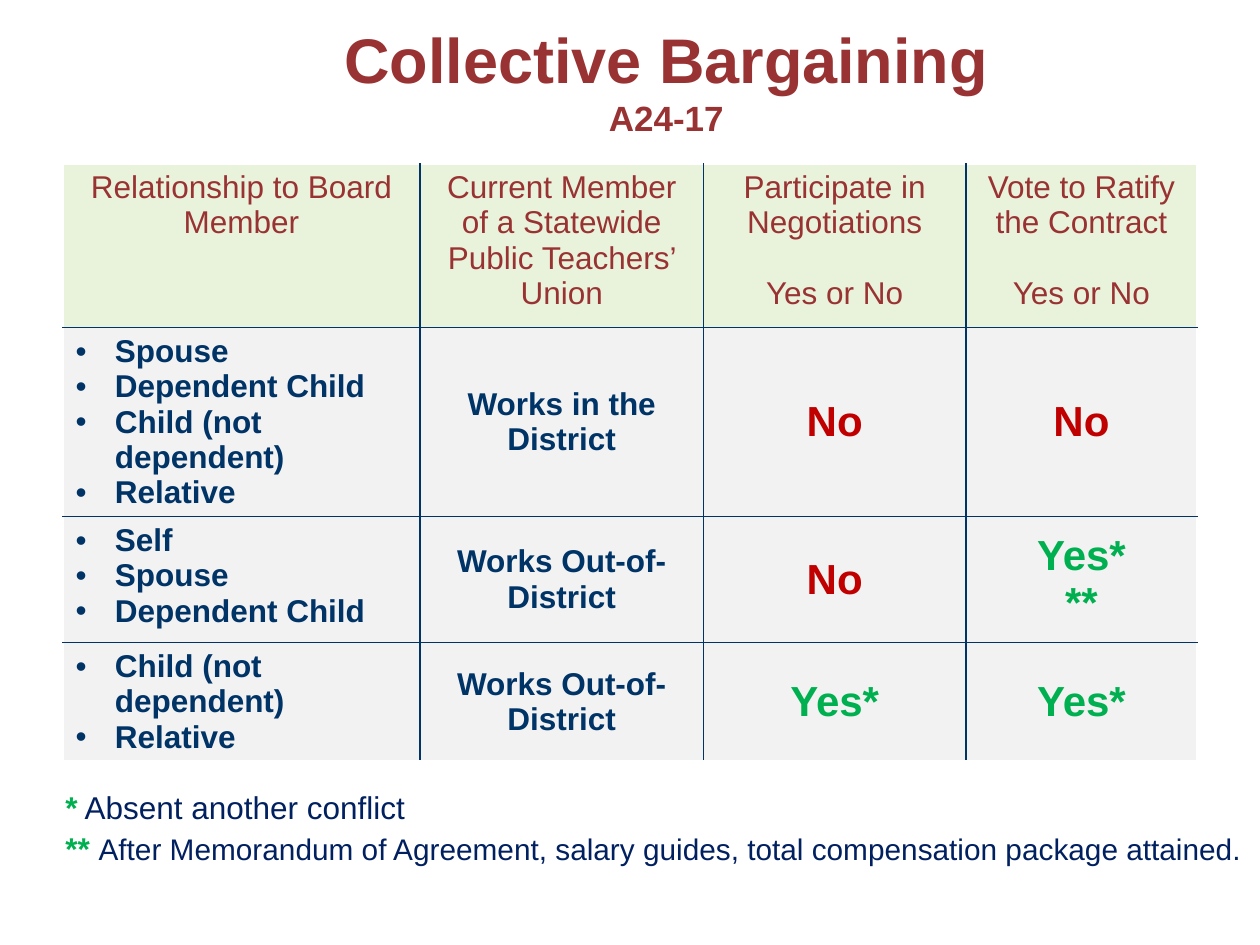
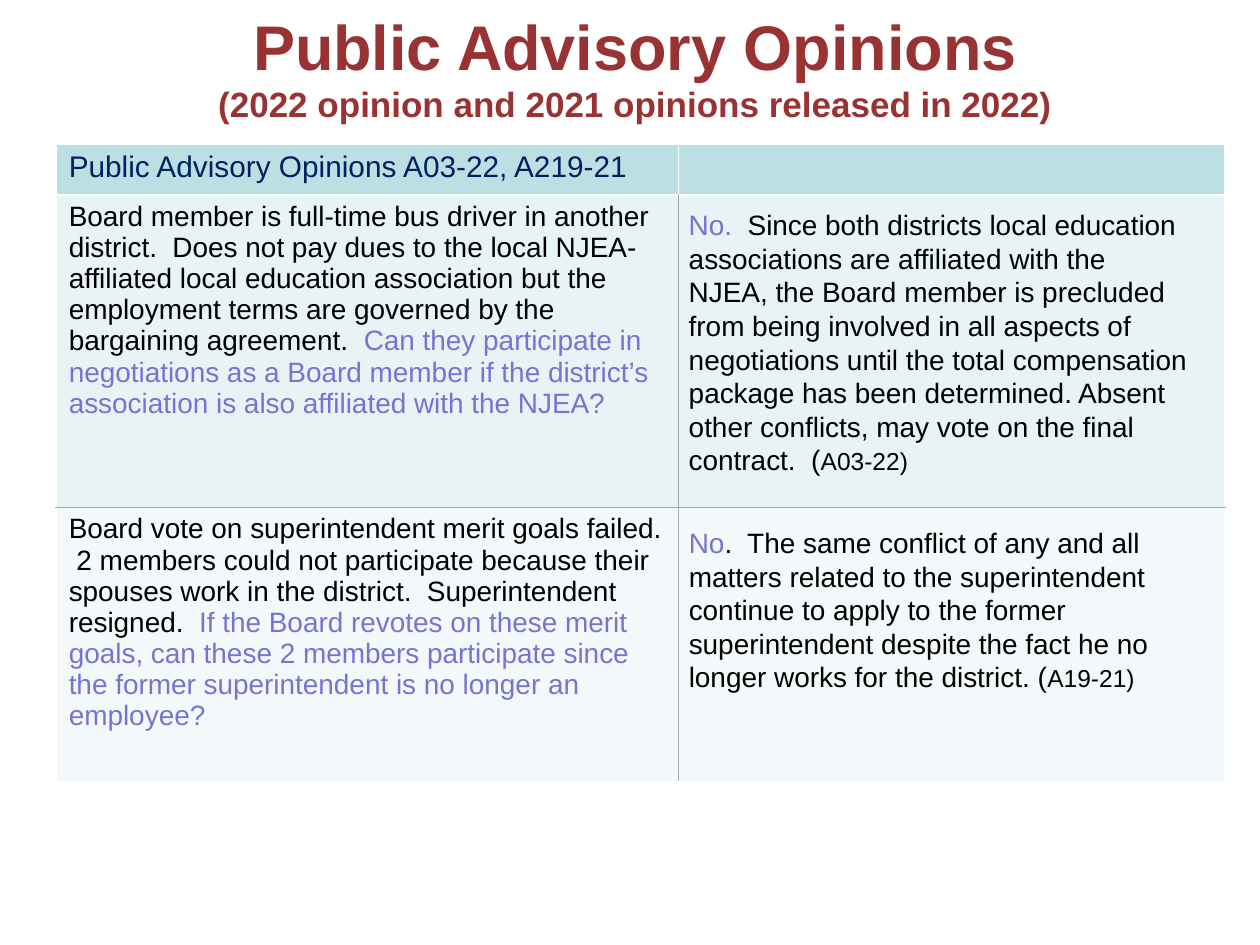
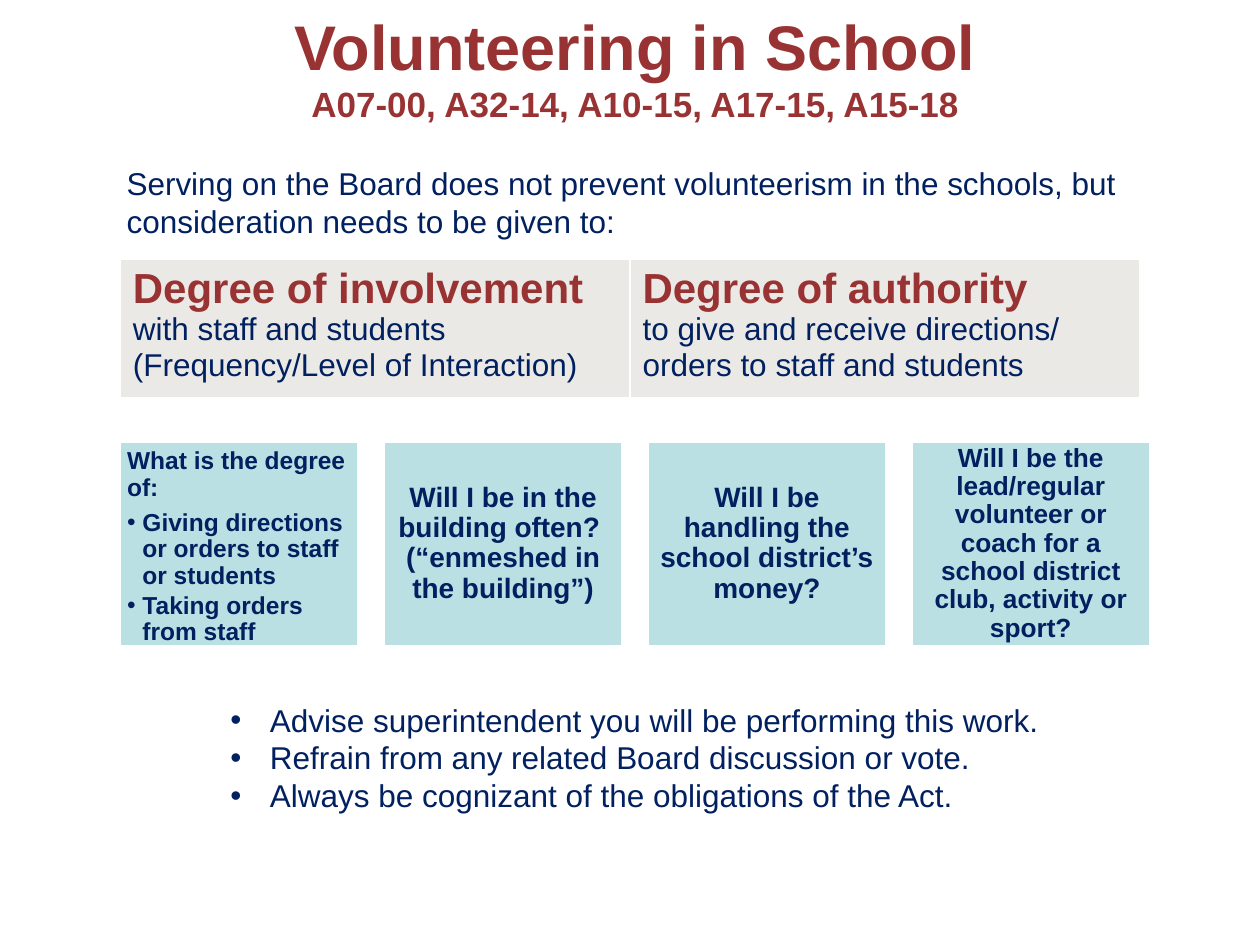
from lxml import etree
from pptx import Presentation
from pptx.dml.color import RGBColor
from pptx.enum.shapes import MSO_SHAPE
from pptx.enum.text import MSO_ANCHOR, MSO_AUTO_SIZE, PP_ALIGN
from pptx.oxml.ns import qn
from pptx.util import Pt

LEFT, CENTER = PP_ALIGN.LEFT, PP_ALIGN.CENTER
TOP, MIDDLE = MSO_ANCHOR.TOP, MSO_ANCHOR.MIDDLE
FIXED = MSO_AUTO_SIZE.NONE
RECT = MSO_SHAPE.RECTANGLE

FONT = "Arial"
HANG = 22.5
HEX = {
    "brick": "993333", "navy": "003366", "ink": "002060", "black": "000000",
    "red": "C00000", "green": "00B050", "violet": "7575D1", "white": "FFFFFF",
    "lime": "E9F2DA", "pale": "F2F2F2", "aqua": "BBE0E3", "mist": "E7F3F4",
    "frost": "F3F9FA", "stone": "EBE9E5", "gray": "A6A6A6",
}
RGB = {name: RGBColor.from_string(code) for name, code in HEX.items()}


def write(frame, paras, align=LEFT, lead=1.0, hang=0, after=0):
    """Add paragraphs, each a list of (text, size, colour, bold) runs; hang > 0 bullets them."""
    for runs in paras:
        para = frame.paragraphs[0]
        if para.runs:
            para = frame.add_paragraph()
        if hang:
            props = para._p.get_or_add_pPr()
            props.set("marL", str(Pt(hang)))
            props.set("indent", str(-Pt(hang)))
            etree.SubElement(props, qn("a:buFont"), typeface=FONT)
            etree.SubElement(props, qn("a:buChar"), char="•")
        para.alignment = align
        para.line_spacing = lead
        para.space_before, para.space_after = Pt(0), Pt(after)
        for text, size, color, bold in runs:
            run = para.add_run()
            run.text = text
            run.font.name, run.font.size, run.font.bold = FONT, Pt(size), bold
            run.font.color.rgb = RGB[color]


def grid(slide, left, top, cols, rows, fills, lines):
    """Add a table; fills and lines name the fill and inner border colour of each row."""
    table = slide.shapes.add_table(len(rows), len(cols), Pt(left), Pt(top),
                                   Pt(sum(cols)), Pt(sum(rows))).table
    table.first_row = table.horz_banding = False
    for col, width in zip(table.columns, cols):
        col.width = Pt(width)
    for r, height in enumerate(rows):
        table.rows[r].height = Pt(height)
        for c in range(len(cols)):
            cell = table.cell(r, c)
            cell.fill.solid()
            cell.fill.fore_color.rgb = RGB[fills[r]]
            edges = [("a:lnL", lines[r] if c else "white"),
                     ("a:lnR", lines[r] if c < len(cols) - 1 else "white"),
                     ("a:lnT", lines[r - 1] if r else "white"),
                     ("a:lnB", lines[r] if r < len(rows) - 1 else "white")]
            props = cell._tc.get_or_add_tcPr()
            for at, (tag, color) in enumerate(edges):
                edge = etree.Element(qn(tag), w=str(Pt(1)))
                fill = etree.SubElement(edge, qn("a:solidFill"))
                etree.SubElement(fill, qn("a:srgbClr"), val=HEX[color])
                props.insert(at, edge)
    return table


deck = Presentation()
deck.slide_width, deck.slide_height = Pt(720), Pt(540)

# Slides and titles: layout, left, height, heading, subheading
heads = [
    (5, 77.75, 66.25, "Collective Bargaining", "A24-17"),
    (5, 60, 51, "Public Advisory Opinions",
     "(2022 opinion and 2021 opinions released in 2022)"),
    (1, 60, 51, "Volunteering in School",
     "A07-00, A32-14, A10-15, A17-15, A15-18"),
]
slides = []
for layout, left, height, main, sub in heads:
    slide = deck.slides.add_slide(deck.slide_layouts[layout])
    title = slide.shapes.title
    title.left, title.top = Pt(left), Pt(12.25)
    title.width, title.height = Pt(606), Pt(height)
    frame = title.text_frame
    frame.auto_size, frame.vertical_anchor = FIXED, MIDDLE
    write(frame, [[(main, 36, "brick", True)], [(sub, 20, "brick", True)]], CENTER)
    slides.append(slide)
bargain, advice, school = slides

# Collective bargaining table
table = grid(bargain, 36, 93.6, [204, 162, 150, 132], [93.6, 108, 72, 67.5],
             ["lime"] + ["pale"] * 3, ["navy"] * 4)
names = [
    ["Relationship to Board Member"],
    ["Current Member of a Statewide", "Public Teachers’ Union"],
    ["Participate in Negotiations", "Yes or No"],
    ["Vote to Ratify the Contract", "Yes or No"],
]
for c, lines in enumerate(names):
    frame = table.cell(0, c).text_frame
    write(frame, [[(line, 18, "brick", False)] for line in lines], CENTER)
    if lines[-1] == "Yes or No":
        frame.paragraphs[1].space_before = Pt(20)
cases = [
    (["Spouse", "Dependent Child", "Child (not dependent)", "Relative"],
     "Works in the District", ["No"], ["No"]),
    (["Self", "Spouse", "Dependent Child"],
     "Works Out-of-District", ["No"], ["Yes*", "**"]),
    (["Child (not dependent)", "Relative"],
     "Works Out-of-District", ["Yes*"], ["Yes*"]),
]
for r, (kin, work, *votes) in enumerate(cases, 1):
    write(table.cell(r, 0).text_frame,
          [[(who, 18, "navy", True)] for who in kin], hang=HANG)
    write(table.cell(r, 1).text_frame, [[(work, 18, "navy", True)]], CENTER)
    for c, vote in enumerate(votes, 2):
        color = "red" if vote == ["No"] else "green"
        write(table.cell(r, c).text_frame,
              [[(line, 24, color, True)] for line in vote], CENTER)
    for c in range(1, 4):
        table.cell(r, c).vertical_anchor = MIDDLE

# Advisory opinions table
table = grid(advice, 32.1, 82.25, [355.5, 312.5], [28.8, 178.5, 157],
             ["aqua", "mist", "frost"], ["white", "gray", "gray"])
write(table.cell(0, 0).text_frame,
      [[("Public Advisory Opinions A03-22, A219-21", 17, "ink", False)]])
asks = [
    ("Board member is full-time bus driver in another district.  Does not pay dues "
     "to the local NJEA-affiliated local education association but the employment "
     "terms are governed by the bargaining agreement.  ",
     "Can they participate in negotiations as a Board member if the district’s "
     "association is also affiliated with the NJEA?"),
    ("Board vote on superintendent merit goals failed.  2 members could not "
     "participate because their spouses work in the district.  Superintendent "
     "resigned.  ",
     "If the Board revotes on these merit goals, can these 2 members participate "
     "since the former superintendent is no longer an employee?"),
]
for r, (fact, ask) in enumerate(asks, 1):
    write(table.cell(r, 0).text_frame,
          [[(fact, 16, "black", False), (ask, 16, "violet", False)]])

# Free text: slide, left, top, width, height, runs
notes = [
    (bargain, 30.25, 447, 300, 29,
     [("*", 18, "green", True), (" Absent another conflict", 18, "ink", False)]),
    (bargain, 30.25, 470.25, 696, 29,
     [("** ", 18, "green", True),
      ("After Memorandum of Agreement, salary guides, total compensation package "
       "attained.", 17, "ink", False)]),
    (advice, 386.5, 115.25, 301.5, 163,
     [("No.", 16, "violet", False),
      ("  Since both districts local education associations are affiliated with the "
       "NJEA, the Board member is precluded from being involved in all aspects of "
       "negotiations until the total compensation package has been determined. "
       "Absent other conflicts, may vote on the final contract.  (",
       16, "black", False),
      ("A03-22)", 14, "black", False)]),
    (advice, 386.5, 296.75, 281, 104,
     [("No", 16, "violet", False),
      (".  The same conflict of any and all matters related to the superintendent "
       "continue to apply to the former superintendent despite the fact he no "
       "longer works for the district. (", 16, "black", False),
      ("A19-21)", 14, "black", False)]),
    (school, 65.25, 90, 595.5, 51,
     [("Serving on the Board does not prevent volunteerism in the schools, but "
       "consideration needs to be given to:", 18, "ink", False)]),
]
for slide, left, top, width, height, runs in notes:
    frame = slide.shapes.add_textbox(Pt(left), Pt(top), Pt(width), Pt(height)).text_frame
    frame.word_wrap = True
    write(frame, [runs])

# Volunteering: degrees
table = grid(school, 68.75, 148.1, [291.25] * 2, [78.5], ["stone"], ["white"])
degrees = [
    ("Degree of involvement", "with staff and students",
     "(Frequency/Level of Interaction)"),
    ("Degree of authority",
     "to give and receive directions/ orders to staff and students"),
]
for c, (head, *lines) in enumerate(degrees):
    write(table.cell(0, c).text_frame,
          [[(head, 24, "brick", True)]] + [[(line, 18, "ink", False)] for line in lines])

# Volunteering: question cards
cards = [
    ("What is the degree of:", 14, LEFT, TOP, 4.25,
     ["Giving directions or orders to staff or students", "Taking orders from staff"]),
    ("Will I be in the building often?  (“enmeshed in the building”)",
     16, CENTER, MIDDLE, 5, []),
    ("Will I be handling the school district’s money?", 16, CENTER, MIDDLE, 5, []),
    ("Will I be the lead/regular volunteer or coach for a school district club, "
     "activity or sport?", 15, CENTER, MIDDLE, 4.25, []),
]
for i, (ask, size, align, anchor, pad, points) in enumerate(cards):
    card = school.shapes.add_shape(RECT, Pt(68.4 + i * 150.75), Pt(252),
                                   Pt(136.8), Pt(117.4))
    card.shadow.inherit = False
    card.fill.solid()
    card.fill.fore_color.rgb = RGB["aqua"]
    card.line.color.rgb, card.line.width = RGB["white"], Pt(2)
    frame = card.text_frame
    frame.word_wrap, frame.vertical_anchor = True, anchor
    frame.margin_left = frame.margin_right = Pt(pad)
    frame.margin_top = frame.margin_bottom = Pt(pad)
    write(frame, [[(ask, size, "ink", True)]], align, 0.9, after=5 if points else 0)
    write(frame, [[(point, size, "ink", True)] for point in points],
          align, 0.9, hang=8.75, after=2)

# Volunteering: advice list
body = school.placeholders[1]
body.left, body.top, body.width, body.height = Pt(124.5), Pt(396.75), Pt(480), Pt(72.75)
body.text_frame.auto_size = FIXED
tips = ["Advise superintendent you will be performing this work.",
        "Refrain from any related Board discussion or vote.",
        "Always be cognizant of the obligations of the Act."]
write(body.text_frame, [[(tip, 18, "ink", False)] for tip in tips], hang=HANG)

deck.save("out.pptx")
